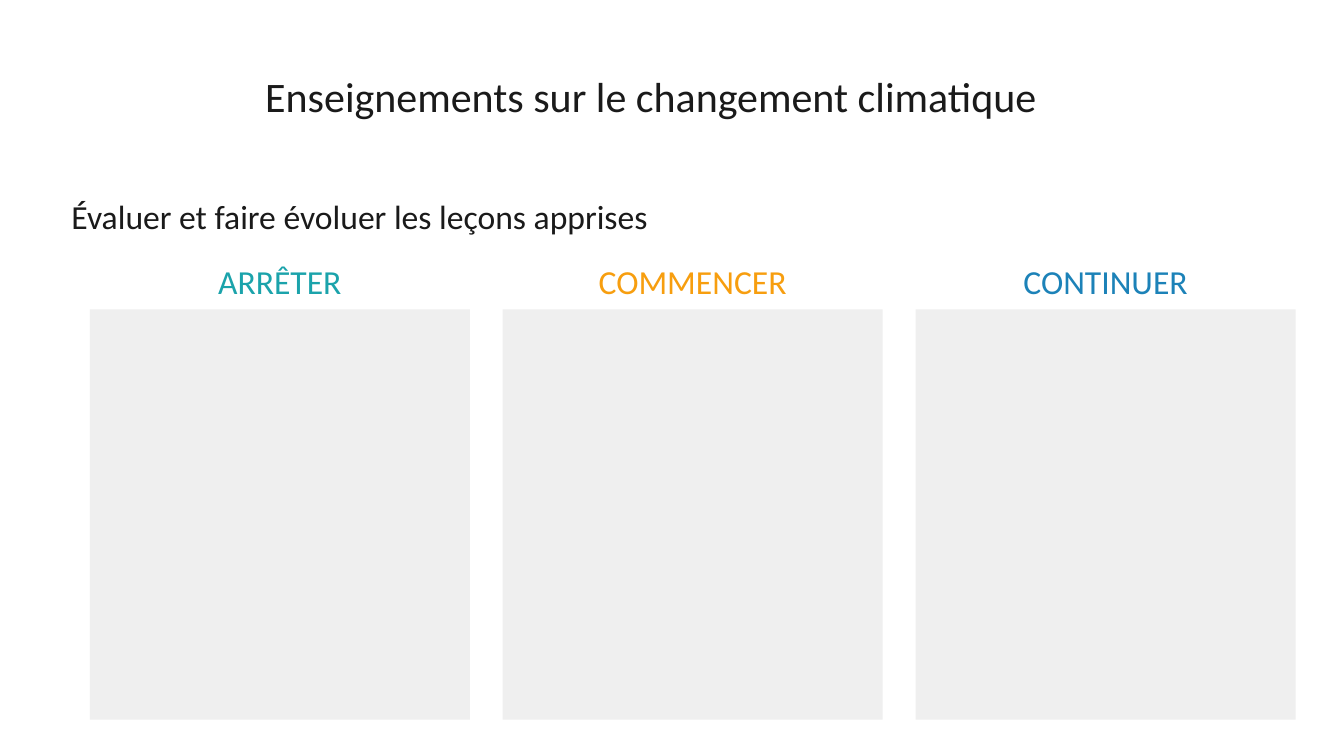
from pptx import Presentation
from pptx.dml.color import RGBColor as Rgb
from pptx.enum.shapes import MSO_SHAPE as Form
from pptx.enum.text import MSO_ANCHOR as Anchor, PP_ALIGN as Align
from pptx.util import Inches, Pt

HUES = {
    "ink": "1A1A1A",
    "stop": "1BA3AB",
    "start": "F79E0F",
    "keep": "1C82B8",
    "panel": "EFEFEF",
}
HEADS = [("ARRÊTER", "stop"), ("COMMENCER", "start"), ("CONTINUER", "keep")]
LEFT, WIDTH, GAP, BLEED = 6.68, 28.28, 2.44, 0.75


class Board:
    font = "Calibri"

    def __init__(self, deck):
        self.deck = deck
        self.slide = deck.slides.add_slide(deck.slide_layouts[6])

    def place(self, left, top, width, height):
        wide, high = self.deck.slide_width, self.deck.slide_height
        sides = (left, wide), (top, high), (width, wide), (height, high)
        return [int(share * full / 100) for share, full in sides]

    def text(self, words, area, size=24, hue="ink", align=Align.LEFT,
             anchor=Anchor.TOP, right=0.1):
        frame = self.slide.shapes.add_textbox(*self.place(*area)).text_frame
        frame.word_wrap = True
        frame.vertical_anchor = anchor
        frame.margin_right = Inches(right)
        para = frame.paragraphs[0]
        para.alignment = align
        para.line_spacing = 0.9
        run = para.add_run()
        run.text = words
        run.font.name = self.font
        run.font.size = Pt(size)
        run.font.color.rgb = Rgb.from_string(HUES[hue])

    def panel(self, area):
        shape = self.slide.shapes.add_shape(Form.RECTANGLE, *self.place(*area))
        shape.shadow.inherit = False
        shape.fill.solid()
        shape.fill.fore_color.rgb = Rgb.from_string(HUES["panel"])
        shape.line.fill.background()


def main():
    deck = Presentation()
    deck.slide_width, deck.slide_height = Inches(13.33), Inches(7.5)
    board = Board(deck)
    board.text("Enseignements sur le changement climatique",
               (16.65, 6, 65.87, 14.27), size=30, align=Align.CENTER,
               anchor=Anchor.MIDDLE, right=0.4)
    board.text("Évaluer et faire évoluer les leçons apprises",
               (4.58, 25.87, 62.79, 8.53))
    for col, (words, hue) in enumerate(HEADS):
        left = LEFT + col * (WIDTH + GAP)
        board.text(words, (left - BLEED, 34.4, WIDTH + 2 * BLEED, 6.53),
                   hue=hue, align=Align.CENTER)
        board.panel((left, 40.93, WIDTH, 54.27))
    deck.save("out.pptx")


if __name__ == "__main__":
    main()
